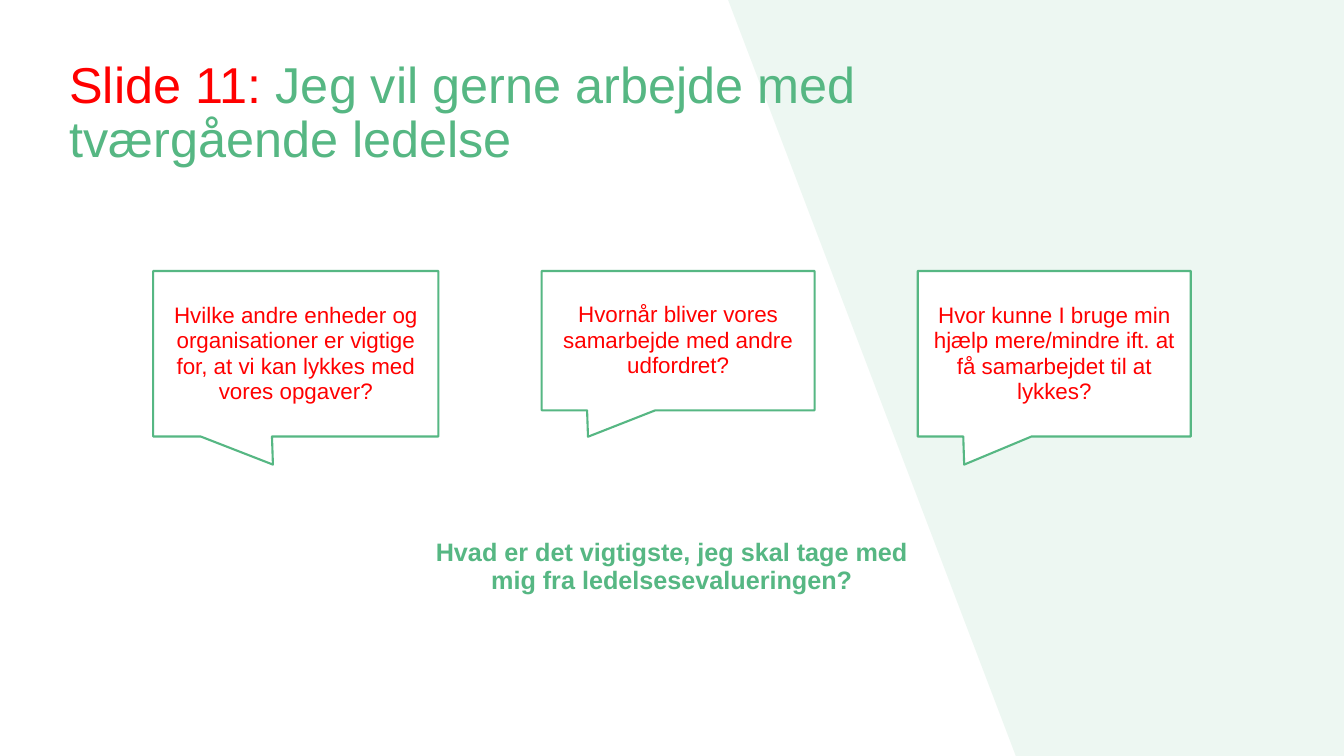
from lxml.etree import SubElement
from pptx import Presentation
from pptx.dml.color import RGBColor
from pptx.enum.shapes import MSO_SHAPE
from pptx.enum.text import MSO_ANCHOR, PP_ALIGN
from pptx.oxml.ns import qn
from pptx.util import Cm, Pt

GREEN = "56B783"
RED = "FF0000"
WHITE = "FFFFFF"
SLIDE_WIDTH, SLIDE_HEIGHT = 33.87, 19.05
BUBBLE_LEFT, BUBBLE_TOP, BUBBLE_GAP = 3.86, 6.83, 2.6

# Question, width, height, tail tip relative to the bubble centre
BUBBLES = [
    ("Hvilke andre enheder og organisationer er vigtige for, at vi kan lykkes med "
     "vores opgaver?", 7.19, 4.17, (-0.08, 0.67)),
    ("Hvornår bliver vores samarbejde med andre udfordret?",
     6.88, 3.51, (-0.33, 0.69)),
    ("Hvor kunne I bruge min hjælp mere/mindre ift. at få samarbejdet til at lykkes?",
     6.88, 4.17, (-0.33, 0.67)),
]


def colour(hex_code):
    return RGBColor.from_string(hex_code)


def fill_solid(shape, hex_code):
    shape.shadow.inherit = False
    shape.fill.solid()
    shape.fill.fore_color.rgb = colour(hex_code)


def write(shape, spans, size, align, spacing, anchor, bold=False):
    """Fill the shape with one paragraph made of (text, colour) spans."""
    frame = shape.text_frame
    frame.word_wrap = True
    frame.vertical_anchor = anchor
    para = frame.paragraphs[0]
    para.alignment = align
    para.line_spacing = spacing
    para.font.name = "Arial"
    para.font.size = Pt(size)
    para.font.bold = bold
    for text, hex_code in spans:
        span = para.add_run()
        span.text = text
        span.font.color.rgb = colour(hex_code)


def add_slanted_panel(page):
    outline = page.shapes.build_freeform(Cm(18.35), 0)
    outline.add_line_segments([
        (Cm(SLIDE_WIDTH), 0),
        (Cm(SLIDE_WIDTH), Cm(SLIDE_HEIGHT)),
        (Cm(25.6), Cm(SLIDE_HEIGHT)),
    ])
    panel = outline.convert_to_shape()
    fill_solid(panel, GREEN)
    panel.line.fill.background()
    tint = panel.fill._xPr.find(qn("a:solidFill"))[0]
    SubElement(tint, qn("a:alpha"), val="10000")


def add_text(page, left, top, width, height, *text_settings):
    box = page.shapes.add_textbox(Cm(left), Cm(top), Cm(width), Cm(height))
    write(box, *text_settings)


def add_bubble(page, left, question, width, height, tail):
    bubble = page.shapes.add_shape(
        MSO_SHAPE.RECTANGULAR_CALLOUT,
        Cm(left), Cm(BUBBLE_TOP), Cm(width), Cm(height))
    bubble.adjustments[0], bubble.adjustments[1] = tail
    fill_solid(bubble, WHITE)
    bubble.line.color.rgb = colour(GREEN)
    bubble.line.width = Pt(1.5)
    write(bubble, [(question, RED)], 16, PP_ALIGN.CENTER, 0.95, MSO_ANCHOR.MIDDLE)


def main():
    deck = Presentation()
    deck.slide_width, deck.slide_height = Cm(SLIDE_WIDTH), Cm(SLIDE_HEIGHT)
    page = deck.slides.add_slide(deck.slide_layouts[6])

    add_slanted_panel(page)
    add_text(page, 1.5, 1.47, 26.59, 2.82,
             [("Slide 11: ", RED),
              ("Jeg vil gerne arbejde med tværgående ledelse", GREEN)],
             36, PP_ALIGN.LEFT, 0.9, MSO_ANCHOR.MIDDLE)

    left = BUBBLE_LEFT
    for question, width, height, tail in BUBBLES:
        add_bubble(page, left, question, width, height, tail)
        left += width + BUBBLE_GAP

    add_text(page, 10.67, 13.44, 12.52, 1.73,
             [("Hvad er det vigtigste, jeg skal tage med mig fra "
               "ledelsesevalueringen?", GREEN)],
             18, PP_ALIGN.CENTER, 0.95, MSO_ANCHOR.TOP, True)

    deck.save("out.pptx")


if __name__ == "__main__":
    main()
